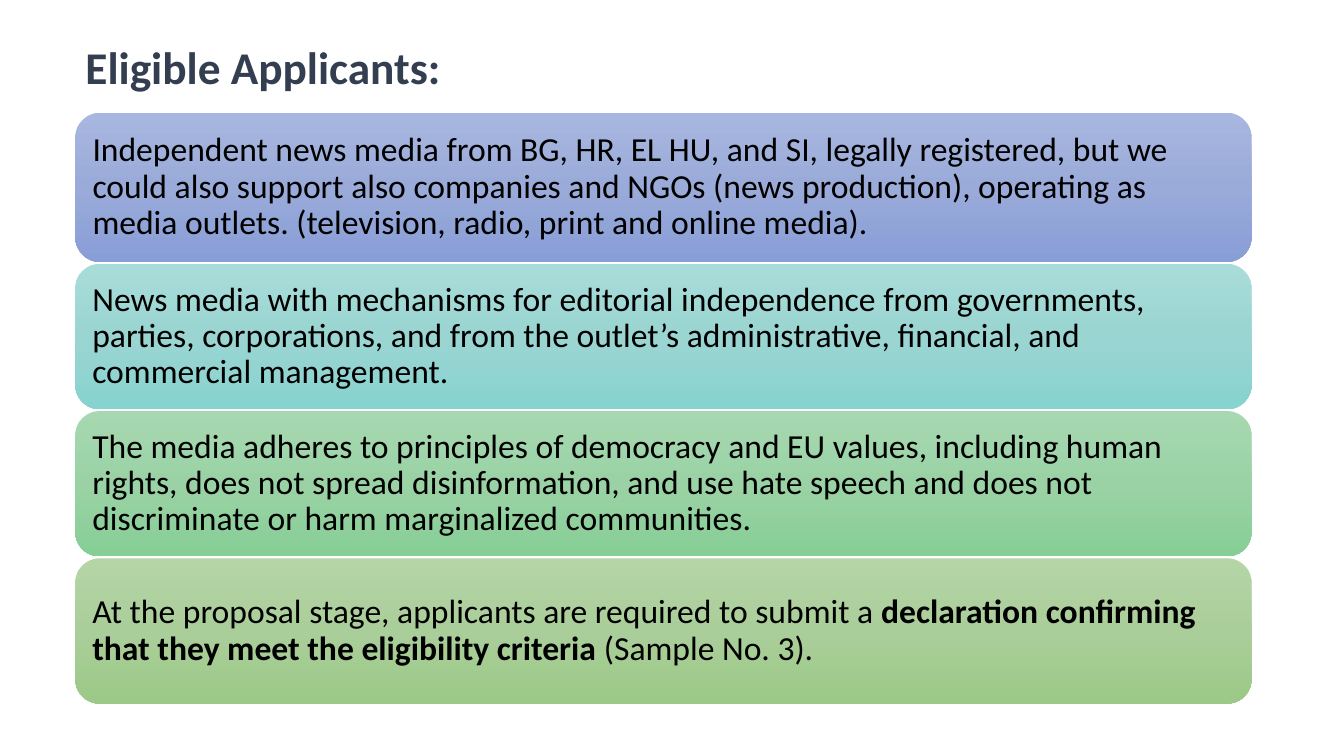
"""Build the slide listing who is eligible to apply."""
from copy import deepcopy

from lxml import etree
from pptx import Presentation
from pptx.dml.color import RGBColor
from pptx.enum.shapes import MSO_SHAPE
from pptx.enum.text import MSO_ANCHOR, PP_ALIGN
from pptx.oxml import parse_xml
from pptx.oxml.ns import qn
from pptx.util import Cm, Pt

ROUNDED = MSO_SHAPE.ROUNDED_RECTANGLE
MIDDLE = MSO_ANCHOR.MIDDLE
LEFT = PP_ALIGN.LEFT

FONT = "Calibri"
BLACK = RGBColor(0x00, 0x00, 0x00)
SLATE = RGBColor(0x33, 0x3F, 0x50)
BLUES = RGBColor(0xA8, 0xB7, 0xDF), RGBColor(0x9A, 0xAB, 0xD9), RGBColor(0x88, 0x9E, 0xD7)
TEALS = RGBColor(0xA8, 0xDC, 0xD9), RGBColor(0x9A, 0xD5, 0xD2), RGBColor(0x87, 0xD3, 0xCF)
GREENS = RGBColor(0xA7, 0xD8, 0xB1), RGBColor(0x9A, 0xD2, 0xA5), RGBColor(0x87, 0xCE, 0x96)
OLIVES = RGBColor(0xB5, 0xD5, 0xA7), RGBColor(0xAA, 0xCE, 0x9A), RGBColor(0x9C, 0xC9, 0x87)

TEXT_SHADOW = (
    '<a:effectLst xmlns:a="http://schemas.openxmlformats.org/drawingml/2006/main">'
    '<a:outerShdw blurRad="38100" dist="38100" dir="2700000" algn="tl">'
    '<a:srgbClr val="000000"><a:alpha val="43000"/></a:srgbClr>'
    '</a:outerShdw></a:effectLst>'
)

MARGIN, WIDTH, GAP = 1.9, 29.64, 0.05

CRITERIA = [
    (3.76, BLUES, [
        ("Independent news media from BG, HR, EL HU, and SI, legally registered, "
         "but we could also support also companies and NGOs (news production), "
         "operating as media outlets. (television, radio, print and online media).", False),
    ]),
    (3.66, TEALS, [
        ("News media with mechanisms for editorial independence from governments, "
         "parties, corporations, and from the outlet’s administrative, financial, "
         "and commercial management.", False),
    ]),
    (3.66, GREENS, [
        ("The media adheres to principles of democracy and EU values, including "
         "human rights, does not spread disinformation, and use hate speech and "
         "does not discriminate or harm marginalized communities.", False),
    ]),
    (3.66, OLIVES, [
        ("At the proposal stage, applicants are required to submit a ", False),
        ("declaration confirming that they meet the eligibility criteria", True),
        (" (Sample No. 3).", False),
    ]),
]


def add_run(p, text, size, color, bold):
    r = p.add_run()
    r.text = text
    r.font.name = FONT
    r.font.size = Pt(size)
    r.font.bold = bold
    r.font.color.rgb = color
    return r


prs = Presentation()
prs.slide_width, prs.slide_height = Cm(33.87), Cm(19.05)
s = prs.slides.add_slide(prs.slide_layouts[5])

title = s.shapes.title
title.left, title.top, title.width, title.height = Cm(MARGIN), Cm(0.75), Cm(WIDTH), Cm(2)
tf = title.text_frame
tf.vertical_anchor = MIDDLE
p = tf.paragraphs[0]
p.alignment = LEFT
p.line_spacing = 0.9
r = add_run(p, "Eligible Applicants:", 32.4, SLATE, True)
r.font.fill._xPr.find(qn("a:solidFill")).addnext(parse_xml(TEXT_SHADOW))

top = 2.84
for height, colors, runs in CRITERIA:
    sp = s.shapes.add_shape(ROUNDED, Cm(MARGIN), Cm(top), Cm(WIDTH), Cm(height))
    sp.shadow.inherit = False
    sp.line.fill.background()
    sp.fill.gradient()
    sp.fill.gradient_angle = 270
    first_stop = next(sp._element.spPr.iter(qn("a:gs")))
    first_stop.addnext(deepcopy(first_stop))
    for i, (stop, color) in enumerate(zip(sp.fill.gradient_stops, colors)):
        stop.position = i / 2
        stop.color.rgb = color

    tf = sp.text_frame
    tf.word_wrap = True
    tf.vertical_anchor = MIDDLE
    tf.margin_left = tf.margin_right = tf.margin_top = tf.margin_bottom = Cm(0.25)
    p = tf.paragraphs[0]
    p.alignment = LEFT
    p.line_spacing = 0.9
    spacing = etree.SubElement(p._p.get_or_add_pPr(), qn("a:spcAft"))
    etree.SubElement(spacing, qn("a:spcPct"), val="35000")
    for text, bold in runs:
        add_run(p, text, 24, BLACK, bold)
    top += height + GAP

prs.save("out.pptx")
